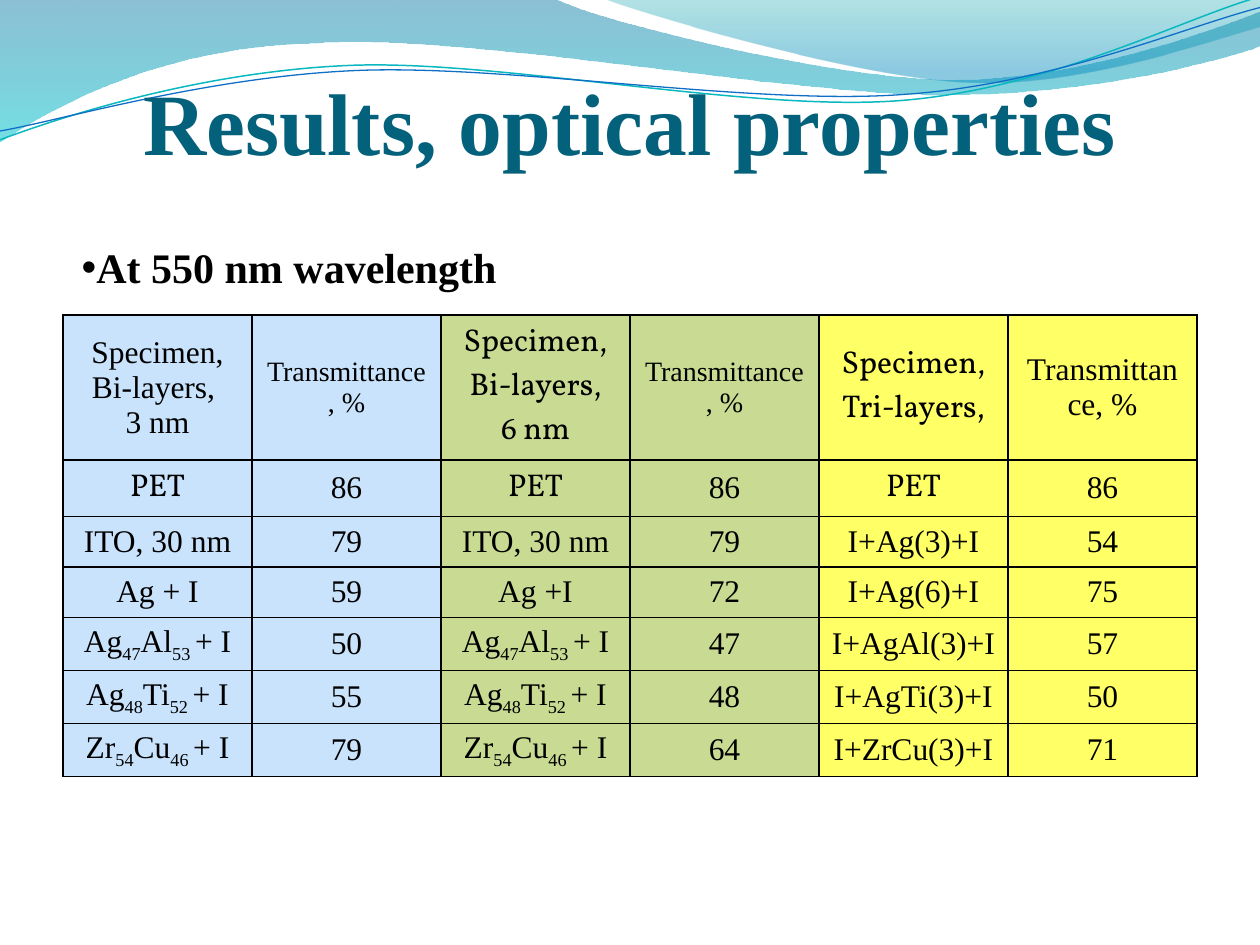
from lxml import etree
from pptx import Presentation
from pptx.dml.color import RGBColor
from pptx.enum.text import MSO_ANCHOR, PP_ALIGN
from pptx.oxml import parse_xml
from pptx.oxml.ns import nsdecls, qn
from pptx.util import Inches, Pt

CENTER, MIDDLE = PP_ALIGN.CENTER, MSO_ANCHOR.MIDDLE
TIMES, VOLLKORN = "Times New Roman", "Vollkorn"
BLACK = RGBColor(0x00, 0x00, 0x00)
TITLE_TEAL = RGBColor(0x04, 0x61, 0x7B)
BLUE = RGBColor(0xC8, 0xE3, 0xFB)
GREEN = RGBColor(0xC9, 0xDA, 0x92)
YELLOW = RGBColor(0xFF, 0xFF, 0x66)
WAVE_BLUE = RGBColor(0x00, 0x74, 0xA1)
WAVE_CYAN = RGBColor(0x00, 0xC6, 0xCF)
CORNER_TEAL = RGBColor(0x00, 0xA1, 0xA9)
CORNER_BLUE = RGBColor(0x00, 0x8B, 0xBF)
LINE_TEAL = RGBColor(0x0A, 0xB8, 0xBF)
LINE_BLUE = RGBColor(0x0F, 0x6F, 0xC6)

# Each step is a line end (2 numbers) or a Bezier curve (6 numbers).
BANDS = [
    ([(0, 0), (4.4, -0.01), (4.76, 0.17, 6.64, 0.63, 7.58, 0.63),
      (8.53, 0.63, 9.58, 0.26, 10, 0.09), (10.01, 0.36),
      (9.83, 0.44, 8.7, 0.76, 7.46, 0.75), (6.22, 0.75, 3.82, 0.28, 2.57, 0.34),
      (1.29, 0.36, 0.46, 0.83, -0.01, 1.13)],
     [(0, WAVE_BLUE, 45), (1, WAVE_CYAN, 55)]),
    ([(4.79, -0.01), (5.09, 0.11, 6.82, 0.62, 7.69, 0.65),
      (8.56, 0.69, 9.61, 0.32, 10, 0.21), (10, 0)],
     [(0, CORNER_TEAL, 30), (0.8, CORNER_BLUE, 45)]),
]
WAVES = [
    ([(0, 1.11), (0.48, 0.93, 1.58, 0.57, 2.77, 0.52),
      (3.95, 0.47, 5.93, 0.89, 7.13, 0.8), (8.33, 0.71, 9.38, 0.15, 9.98, -0.02)],
     LINE_TEAL, 0.85),
    ([(0, 1.04), (0.47, 0.96, 1.64, 0.61, 2.83, 0.56),
      (4.03, 0.51, 5.97, 0.84, 7.17, 0.75), (8.36, 0.67, 9.41, 0.21, 10, 0.06)],
     LINE_BLUE, 0.75),
]
TITLE = "Results, optical properties"
NOTE = "At 550 nm wavelength"
# Text between underscores is subscript; a line break starts a paragraph.
ROWS = [
    ("Specimen,\nBi-layers, \n3 nm", "Transmittance, %", "Specimen,\nBi-layers,\n6 nm",
     "Transmittance, %", "Specimen,\nTri-layers,", "Transmittance, %"),
    ("PET", "86", "PET", "86", "PET", "86"),
    ("ITO, 30 nm", "79", "ITO, 30 nm", "79", "I+Ag(3)+I", "54"),
    ("Ag + I", "59", "Ag +I", "72", "I+Ag(6)+I", "75"),
    ("Ag_47_Al_53 _+ I", "50", "Ag_47_Al_53 _+ I", "47", "I+AgAl(3)+I", "57"),
    ("Ag_48_Ti_52 _+ I", "55", "Ag_48_Ti_52 _+ I", "48", "I+AgTi(3)+I", "50"),
    ("Zr_54_Cu_46 _+ I", "79", "Zr_54_Cu_46 _+ I", "64", "I+ZrCu(3)+I", "71"),
]
ROW_HEIGHTS = [1.15, 0.45, 0.4, 0.4, 0.42, 0.42, 0.42]
COLUMN_FILLS = [BLUE, BLUE, GREEN, GREEN, YELLOW, YELLOW]
VOLLKORN_CELLS = {(0, 2), (0, 4), (1, 0), (1, 2), (1, 4)}
SMALL_CELLS = {(0, 1), (0, 3)}


def add_outline(s, steps, close):
    points = [(step[i] * 100, step[i + 1] * 100)
              for step in steps for i in range(0, len(step), 2)]
    fb = s.shapes.build_freeform(*points[0], scale=Inches(0.01))
    fb.add_line_segments(points[1:], close=close)
    sp = fb.convert_to_shape()
    sp.shadow.inherit = False
    segments = iter(list(sp._element.iter(qn("a:lnTo"))))
    for step in steps[1:]:
        segment = next(segments)
        if len(step) == 6:
            segment.addprevious(curve := etree.Element(qn("a:cubicBezTo")))
            for part in (segment, next(segments), next(segments)):
                curve.append(part[0])
                part.getparent().remove(part)
    return sp


def add_band(s, steps, stops):
    sp = add_outline(s, steps, True)
    sp.line.fill.background()
    sp.fill.gradient()
    sp.fill.gradient_angle = 270
    for stop, (pos, color, _) in zip(sp.fill.gradient_stops, stops):
        stop.position = pos
        stop.color.rgb = color
    for clr, (_, _, alpha) in zip(sp._element.spPr.iter(qn("a:srgbClr")), stops):
        etree.SubElement(clr, qn("a:alpha")).set("val", str(alpha * 1000))


def add_wave(s, steps, color, width):
    sp = add_outline(s, steps, False)
    sp.fill.background()
    sp.line.color.rgb = color
    sp.line.width = Pt(width)


def add_run(p, text, size, font=TIMES, color=BLACK, bold=False):
    r = p.add_run()
    r.text = text
    r.font.size = Pt(size)
    r.font.name = font
    r.font.color.rgb = color
    r.font.bold = bold
    return r


def add_borders(cell):
    tcPr = cell._tc.get_or_add_tcPr()
    for i, side in enumerate(("lnL", "lnR", "lnT", "lnB")):
        tcPr.insert(i, parse_xml(
            f'<a:{side} {nsdecls("a")} w="12700"><a:solidFill>'
            f'<a:srgbClr val="{BLACK}"/></a:solidFill></a:{side}>'))


def fill_cell(cell, text, size, font, color):
    cell.fill.solid()
    cell.fill.fore_color.rgb = color
    cell.vertical_anchor = MIDDLE
    cell.margin_top = cell.margin_bottom = Inches(0.04)
    add_borders(cell)
    tf = cell.text_frame
    for i, line in enumerate(text.split("\n")):
        p = tf.add_paragraph() if i else tf.paragraphs[0]
        p.alignment = CENTER
        for j, part in enumerate(line.split("_")):
            r = add_run(p, part, size, font)
            if j % 2:
                r._r.get_or_add_rPr().set("baseline", "-25000")


def add_results(s):
    table = s.shapes.add_table(len(ROWS), len(COLUMN_FILLS), Inches(0.5), Inches(2.5),
                               Inches(9), Inches(sum(ROW_HEIGHTS))).table
    table.first_row = table.horz_banding = False
    for i, (row, height) in enumerate(zip(ROWS, ROW_HEIGHTS)):
        table.rows[i].height = Inches(height)
        for j, text in enumerate(row):
            fill_cell(table.cell(i, j), text, 16 if (i, j) in SMALL_CELLS else 18,
                      VOLLKORN if (i, j) in VOLLKORN_CELLS else TIMES, COLUMN_FILLS[j])


def add_title(s):
    tf = s.shapes.add_textbox(Inches(0.5), Inches(0.31), Inches(9), Inches(1.25)).text_frame
    tf.word_wrap = True
    tf.vertical_anchor = MIDDLE
    tf.margin_left = tf.margin_right = tf.margin_bottom = 0
    tf.margin_top = Inches(0.05)
    p = tf.paragraphs[0]
    p.alignment = CENTER
    add_run(p, TITLE, 50, color=TITLE_TEAL, bold=True)


def add_note(s):
    tf = s.shapes.add_textbox(Inches(0.55), Inches(1.87), Inches(3.53), Inches(0.5)).text_frame
    tf.word_wrap = False
    p = tf.paragraphs[0]
    pPr = p._p.get_or_add_pPr()
    etree.SubElement(pPr, qn("a:buFont")).set("typeface", "Arial")
    etree.SubElement(pPr, qn("a:buChar")).set("char", "•")
    add_run(p, NOTE, 24, bold=True)


def main():
    prs = Presentation()
    prs.slide_width, prs.slide_height = Inches(10), Inches(7.5)
    s = prs.slides.add_slide(prs.slide_layouts[6])
    for steps, stops in BANDS:
        add_band(s, steps, stops)
    for steps, color, width in WAVES:
        add_wave(s, steps, color, width)
    add_title(s)
    add_results(s)
    add_note(s)
    prs.save("out.pptx")


if __name__ == "__main__":
    main()
